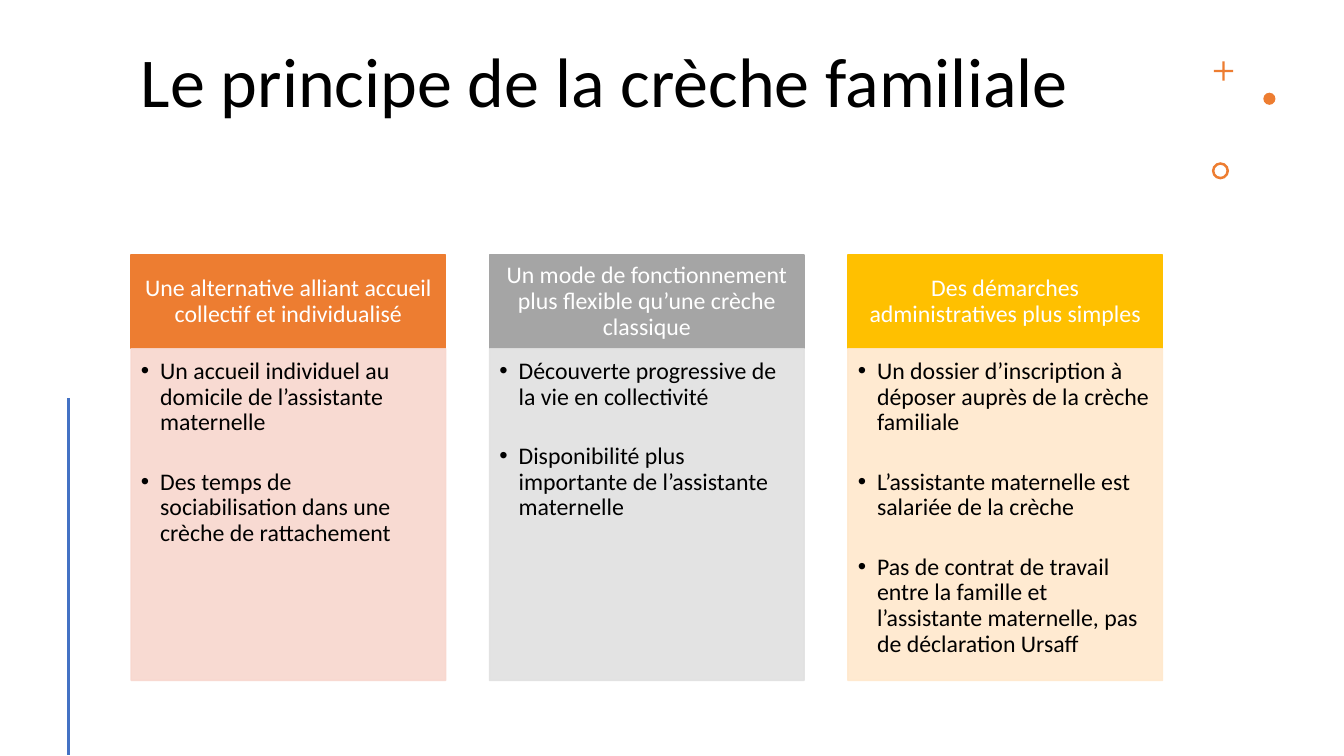
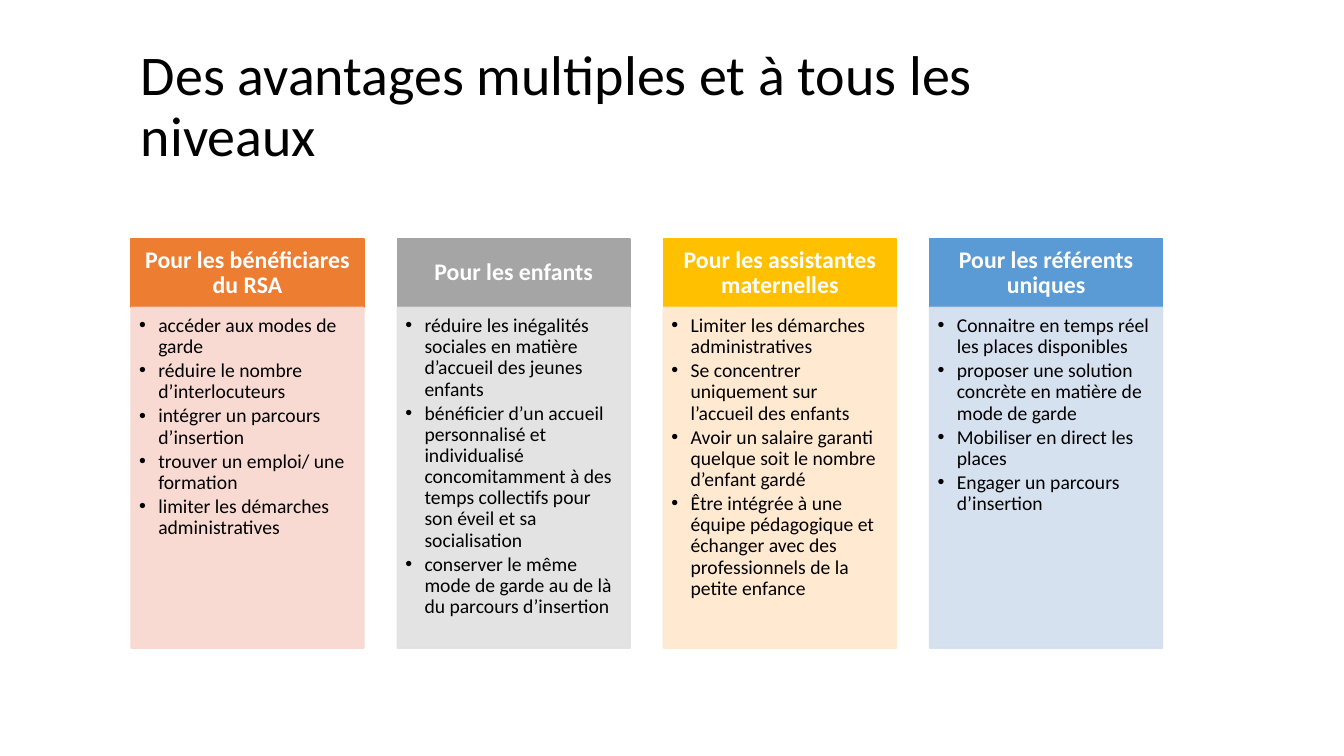
from lxml.etree import SubElement
from pptx import Presentation
from pptx.dml.color import RGBColor
from pptx.enum.shapes import MSO_CONNECTOR, MSO_SHAPE
from pptx.enum.text import MSO_ANCHOR, PP_ALIGN
from pptx.oxml.ns import qn
from pptx.util import Pt

PX = 9144  # EMU in one px, 100 px to the inch
FONT = "Calibri"
ORANGE, GREY, GOLD, BLUE = "ED7D31", "A5A5A5", "FFC000", "5B9BD5"
TONES = [(ORANGE, "F8D7CE"), (GREY, "E1E1E1"), (GOLD, "FFE8CC"), (BLUE, "D2DEEF")]
LEFT, SPAN = 130, 1023

DECK = [
    dict(
        title="Le principe de la crèche familiale", size=50,
        top=253, wide=312, head=93, body=329,
        bold=False, points=17, gap=24, inset=(10, 10, 13, 15),
        cards=[
            ("Une alternative alliant accueil collectif et individualisé", [
                "Un accueil individuel au domicile de l’assistante maternelle",
                "Des temps de sociabilisation dans une crèche de rattachement",
            ]),
            ("Un mode de fonctionnement plus flexible qu’une crèche classique", [
                "Découverte progressive de la vie en collectivité",
                "Disponibilité plus importante de l’assistante maternelle",
            ]),
            ("Des démarches administratives plus simples", [
                "Un dossier d’inscription à déposer auprès de la crèche familiale",
                "L’assistante maternelle est salariée de la crèche",
                "Pas de contrat de travail entre la famille et l’assistante "
                "maternelle, pas de déclaration Ursaff",
            ]),
        ],
    ),
    dict(
        title="Des avantages multiples et à tous les niveaux", size=40,
        top=237, wide=231, head=68, body=338,
        bold=True, points=14, gap=2, inset=(8, 8, 11, 12),
        cards=[
            ("Pour les bénéficiares du RSA", [
                "accéder aux modes de garde",
                "réduire le nombre d’interlocuteurs",
                "intégrer un parcours d’insertion",
                "trouver un emploi/ une formation",
                "limiter les démarches administratives",
            ]),
            ("Pour les enfants", [
                "réduire les inégalités sociales en matière d’accueil des "
                "jeunes enfants",
                "bénéficier d’un accueil personnalisé et individualisé "
                "concomitamment à des temps collectifs pour son éveil et "
                "sa socialisation",
                "conserver le même mode de garde au de là du parcours d’insertion",
            ]),
            ("Pour les assistantes maternelles", [
                "Limiter les démarches administratives",
                "Se concentrer uniquement sur l’accueil des enfants",
                "Avoir un salaire garanti quelque soit le nombre d’enfant gardé",
                "Être intégrée à une équipe pédagogique et échanger avec des "
                "professionnels de la petite enfance",
            ]),
            ("Pour les référents uniques", [
                "Connaitre en temps réel les places disponibles",
                "proposer une solution concrète en matière de mode de garde",
                "Mobiliser en direct les places",
                "Engager un parcours d’insertion",
            ]),
        ],
    ),
]


def draw(slide, kind, box, color, line=True, alpha=None):
    """Add a flat preset shape; alpha is the opacity in percent."""
    shape = slide.shapes.add_shape(kind, *[round(n * PX) for n in box])
    shape.shadow.inherit = False
    shape.fill.solid()
    shape.fill.fore_color.rgb = RGBColor.from_string(color)
    if line:
        shape.line.color.rgb = RGBColor.from_string(color)
        shape.line.width = Pt(1)
    else:
        shape.line.fill.background()
    if alpha:
        for tone in shape.element.spPr.iter(qn("a:srgbClr")):
            SubElement(tone, qn("a:alpha"), val=str(alpha * 1000))
    return shape


def write(shape, lines, size, color="000000", bold=False, align=PP_ALIGN.LEFT,
          anchor=MSO_ANCHOR.TOP, inset=(10, 5, 10, 5), gap=0, bullet=False):
    frame = shape.text_frame
    frame.word_wrap = True
    frame.vertical_anchor = anchor
    (frame.margin_left, frame.margin_top,
     frame.margin_right, frame.margin_bottom) = [n * PX for n in inset]
    for i, line in enumerate(lines):
        para = frame.add_paragraph() if i else frame.paragraphs[0]
        para.alignment = align
        para.line_spacing = 0.9
        para.space_after = Pt(gap)
        run = para.add_run()
        run.text = line
        font = run.font
        font.name, font.size, font.bold = FONT, Pt(size), bold
        font.color.rgb = RGBColor.from_string(color)
        if bullet:
            props = para._p.get_or_add_pPr()
            props.set("marL", str(19 * PX))
            props.set("indent", str(-19 * PX))
            SubElement(props, qn("a:buFont"), typeface="Arial")
            SubElement(props, qn("a:buChar"), char="•")


prs = Presentation()
prs.slide_width, prs.slide_height = 1333 * PX, 750 * PX
blank = prs.slide_layouts[6]

for page in DECK:
    slide = prs.slides.add_slide(blank)
    title = slide.shapes.add_textbox(LEFT * PX, 42 * PX, SPAN * PX, 131 * PX)
    write(title, [page["title"]], page["size"])

    cards, top, wide, head = page["cards"], page["top"], page["wide"], page["head"]
    step = (SPAN - wide) / (len(cards) - 1)
    for i, ((name, items), (dark, pale)) in enumerate(zip(cards, TONES)):
        x = LEFT + i * step
        band = draw(slide, MSO_SHAPE.RECTANGLE, (x, top, wide, head), dark)
        write(band, [name], 17, color="FFFFFF", bold=page["bold"],
              align=PP_ALIGN.CENTER, anchor=MSO_ANCHOR.MIDDLE,
              inset=(13, 8, 13, 8))
        panel = draw(slide, MSO_SHAPE.RECTANGLE,
                     (x, top + head, wide, page["body"]), pale, alpha=90)
        write(panel, items, page["points"], inset=page["inset"],
              gap=page["gap"], bullet=True)

# Ornaments of the first slide
first = prs.slides[0]
plus = draw(first, MSO_SHAPE.CROSS, (1204, 61, 19, 19), ORANGE, line=False)
plus.adjustments[0] = 0.44
draw(first, MSO_SHAPE.OVAL, (1253, 92, 12, 12), ORANGE, line=False)
ring = draw(first, MSO_SHAPE.DONUT, (1202, 161, 17, 17), ORANGE, line=False)
ring.adjustments[0] = 0.15

rule = first.shapes.add_connector(
    MSO_CONNECTOR.STRAIGHT, 68 * PX, 395 * PX, 68 * PX, 749 * PX)
rule.line.color.rgb = RGBColor.from_string("4472C4")
rule.line.width = Pt(2)
SubElement(rule.element.spPr, qn("a:effectLst"))

prs.save("out.pptx")
